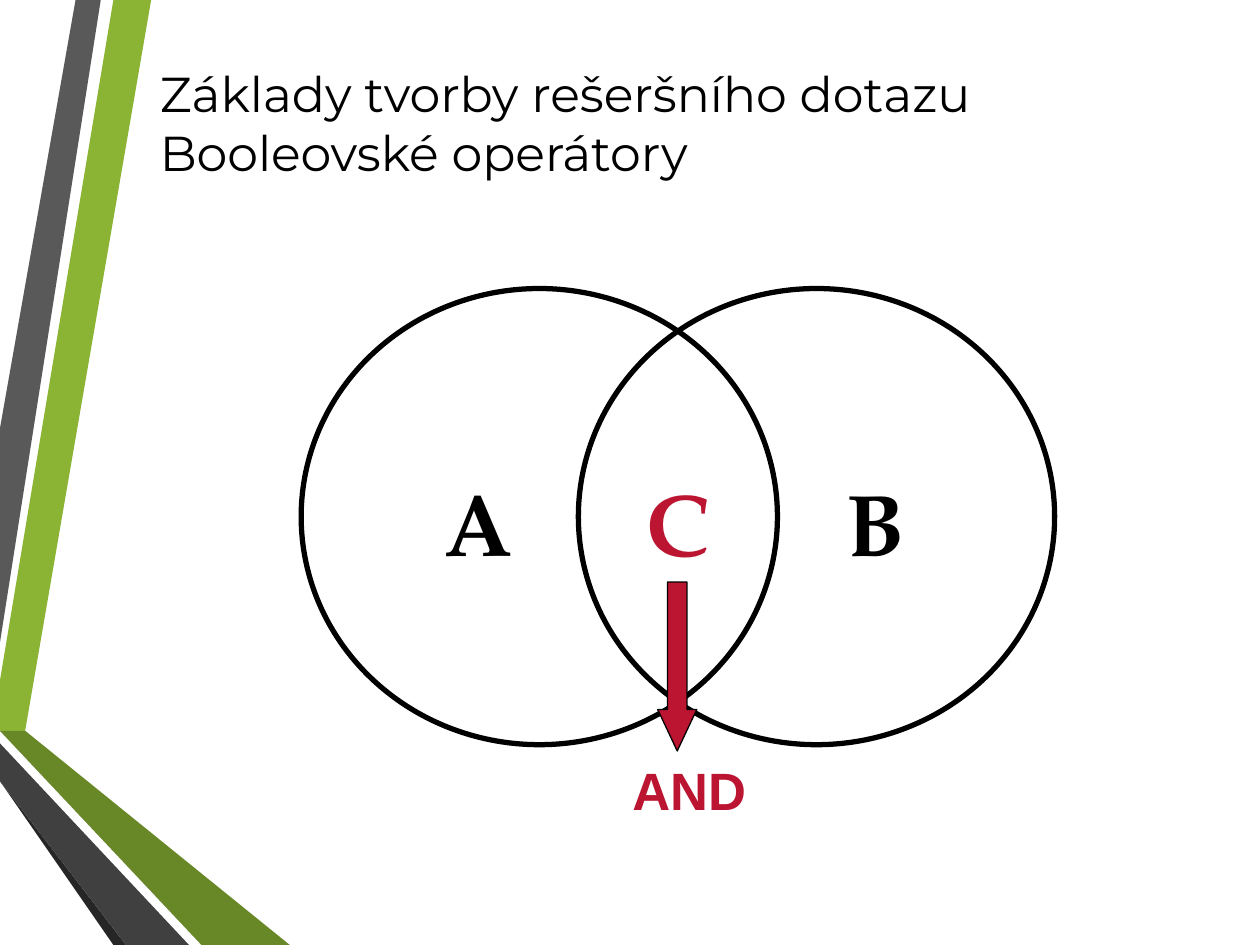
import dataclasses

import pptx
import pptx.dml.color
import pptx.enum.shapes
import pptx.enum.text
import pptx.util

COLUMNS, ROWS = 100, 75
CELL = pptx.util.Inches(0.1)


@dataclasses.dataclass(frozen=True)
class Theme:
    """Colours, fonts and type sizes of the slide."""
    ink: str = "000000"
    accent: str = "BB1531"
    green: str = "8BB434"
    green_dark: str = "688727"
    green_edge: str = "465A1A"
    grey: str = "595959"
    grey_dark: str = "404040"
    grey_edge: str = "262626"
    title_font: str = "Montserrat"
    letter_font: str = "TeX Gyre Pagella"
    operator_font: str = "Arial"
    title_size: int = 28
    letter_size: int = 50
    operator_size: int = 30
    circle_line: float = 3
    arrow_line: float = 0.75


THEME = Theme()

RIBBONS = [
    (THEME.green, [(0, 54.4), (0, 57.5), (2.2, 57.9), (11.7, 0), (8.9, 0)]),
    (THEME.grey, [(8.3, 0), (5.5, 0), (0, 33.6), (0, 50.6)]),
    (THEME.grey_edge, [(0, 61.9), (0, 62.1), (9.3, 75), (9.9, 75)]),
    (THEME.green_edge, [(0, 57.9), (0, 58), (15.6, 75), (16.3, 75)]),
    (THEME.green_dark, [(0, 57.9), (16.3, 75), (23.3, 75), (2.2, 57.9), (0, 57.5)]),
    (THEME.grey_dark, [(0, 61.9), (9.9, 75), (15.1, 75), (0, 58.6)]),
]


def cells(*values):
    """Convert grid cells to lengths."""
    return [round(value * CELL) for value in values]


def colour(code):
    """Return the colour object for a hex code."""
    return pptx.dml.color.RGBColor.from_string(code)


def apply_format(target, values):
    """Set each named attribute of the target."""
    for name, value in values.items():
        setattr(target, name, value)


def paint(shape, fill=None, line=None, width=0):
    """Give a shape its fill and outline, without shadow."""
    shape.shadow.inherit = False
    if fill:
        shape.fill.solid()
        shape.fill.fore_color.rgb = colour(fill)
    else:
        shape.fill.background()
    if line:
        shape.line.color.rgb = colour(line)
        shape.line.width = pptx.util.Pt(width)
    else:
        shape.line.fill.background()


def add_ribbon(slide, fill, points):
    """Add one filled polygon of the folded ribbon."""
    builder = slide.shapes.build_freeform(*points[0], scale=CELL)
    builder.add_line_segments(points[1:], close=True)
    paint(builder.convert_to_shape(), fill)


def add_preset(slide, kind, box, **look):
    """Add a preset shape in a box of grid cells."""
    shape = slide.shapes.add_shape(kind, *cells(*box))
    paint(shape, **look)
    return shape


def add_text(slide, box, text, font, size, code, frame_format, bold=False, centred=True):
    """Add a text box and return its paragraph."""
    frame = slide.shapes.add_textbox(*cells(*box)).text_frame
    apply_format(frame, frame_format)
    paragraph = frame.paragraphs[0]
    paragraph.text = text
    if centred:
        paragraph.alignment = pptx.enum.text.PP_ALIGN.CENTER
    for run in paragraph.runs:
        apply_format(run.font, {"name": font, "size": pptx.util.Pt(size), "bold": bold})
        run.font.color.rgb = colour(code)
    return paragraph


def add_title(slide):
    """Add the two-line heading."""
    add_text(slide, (11.7, 5, 84.3, 9.4),
             "Základy tvorby rešeršního dotazu\vBooleovské operátory",
             THEME.title_font, THEME.title_size, THEME.ink,
             {"word_wrap": True, "vertical_anchor": pptx.enum.text.MSO_ANCHOR.MIDDLE},
             centred=False)


def add_venn(slide):
    """Add the two circles, the arrow and their labels."""
    kinds = pptx.enum.shapes.MSO_SHAPE
    for left in (23.9, 45.9):
        add_preset(slide, kinds.OVAL, (left, 22.9, 37.8, 36.2),
                   line=THEME.ink, width=THEME.circle_line)
    arrow = add_preset(slide, kinds.DOWN_ARROW, (52.2, 46.2, 3.1, 13.4),
                       fill=THEME.accent, line=THEME.ink, width=THEME.arrow_line)
    arrow.adjustments[0], arrow.adjustments[1] = 0.5, 1.06
    grow = pptx.enum.text.MSO_AUTO_SIZE.SHAPE_TO_FIT_TEXT
    for left, letter, code in ((33.3, "A", THEME.ink), (64.8, "B", THEME.ink),
                               (49.1, "C", THEME.accent)):
        add_text(slide, (left, 36.7, 9.4, 9.3), letter, THEME.letter_font,
                 THEME.letter_size, code, {"word_wrap": True, "auto_size": grow}, bold=True)
    operator = add_text(slide, (44.1, 59.7, 16.2, 6.1), "AND", THEME.operator_font,
                        THEME.operator_size, THEME.accent,
                        {"word_wrap": False, "auto_size": grow}, bold=True)
    operator.level = 1
    properties = operator._p.get_or_add_pPr()
    properties.set("marL", str(5 * CELL))
    properties.set("indent", "0")


def main():
    """Build and save the slide."""
    presentation = pptx.Presentation()
    apply_format(presentation, {"slide_width": COLUMNS * CELL, "slide_height": ROWS * CELL})
    slide = presentation.slides.add_slide(presentation.slide_layouts[6])
    for fill, points in RIBBONS:
        add_ribbon(slide, fill, points)
    add_title(slide)
    add_venn(slide)
    presentation.save("out.pptx")


if __name__ == "__main__":
    main()
